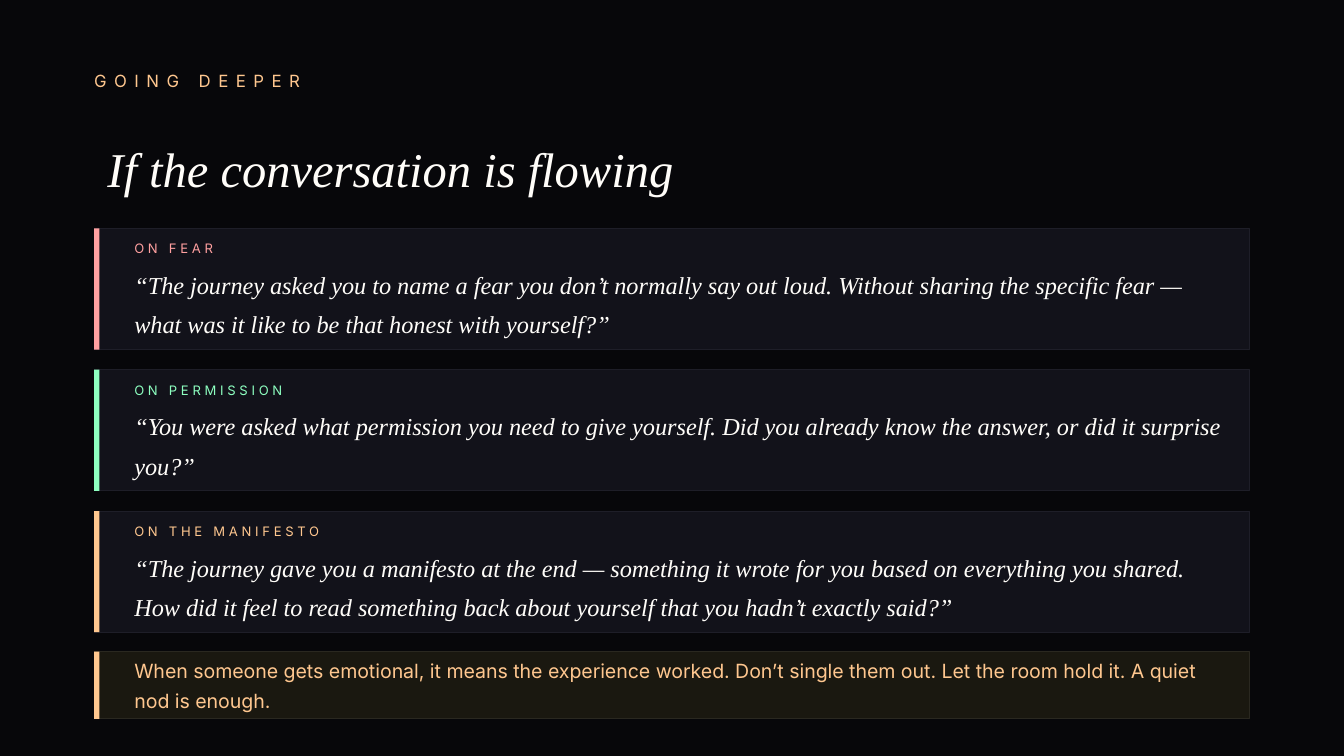
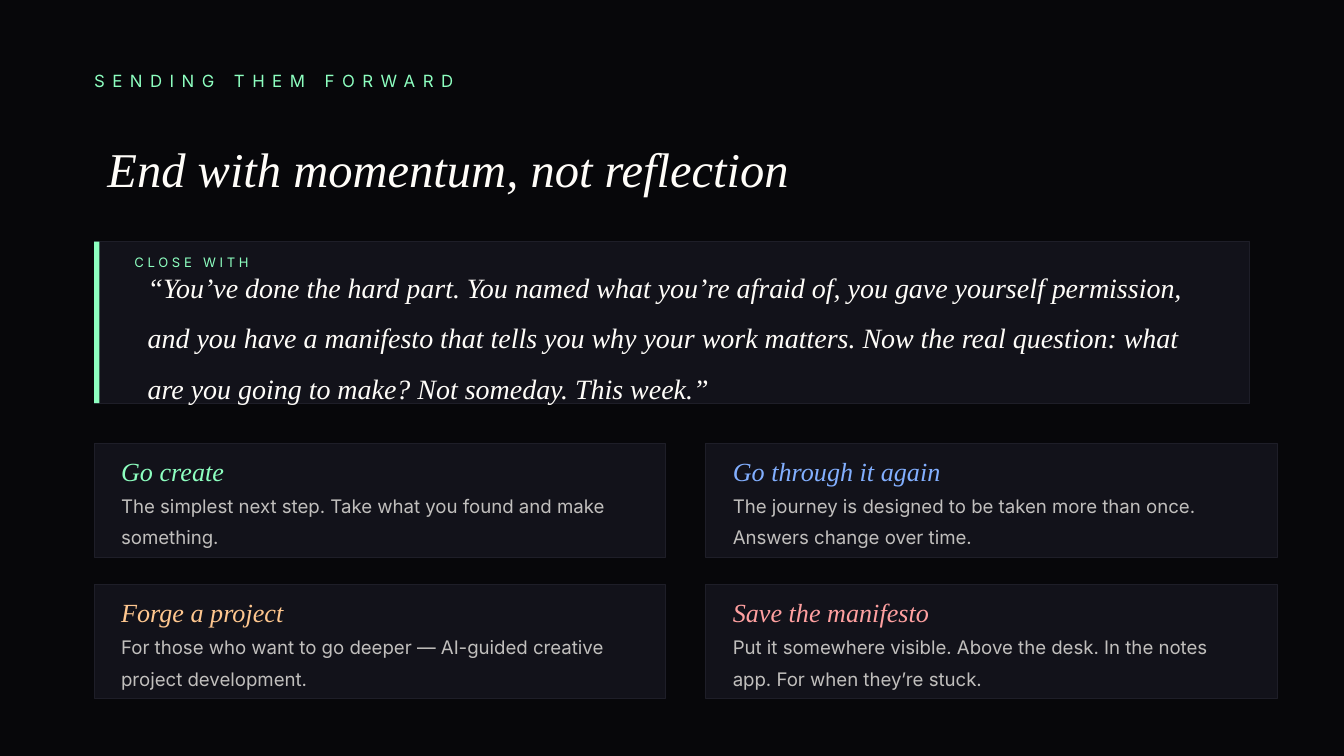
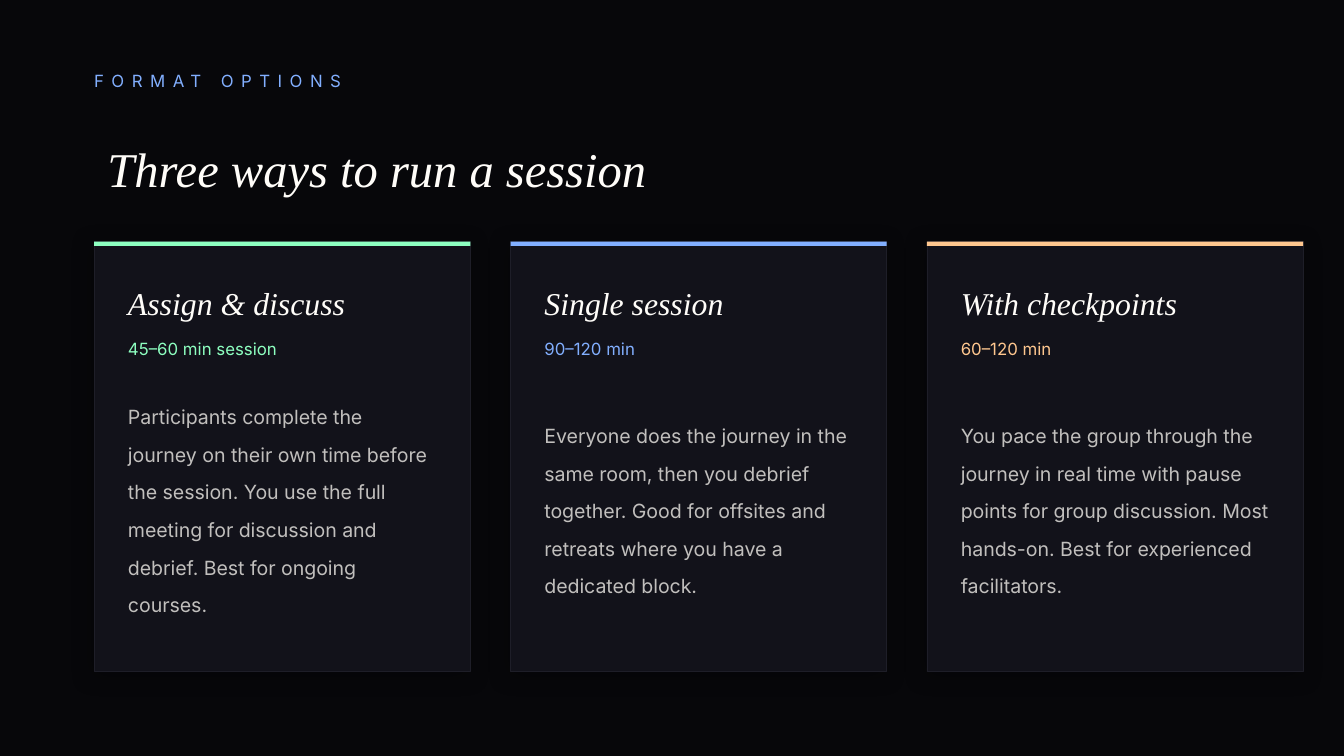
from lxml import etree
from pptx import Presentation
from pptx import util as u
from pptx.dml.color import RGBColor
from pptx.enum import shapes, text
from pptx.oxml.ns import qn

COLORS = {
    "night": "07070A", "panel": "12121A", "panel_edge": "1E1E28",
    "note": "1A1810", "note_edge": "2A2820",
    "ivory": "FFFDF9", "grey": "C1BFBD", "shadow": "000000",
    "amber": "FFC78F", "green": "8DFFC0", "blue": "82AFFF", "coral": "FFA0A0",
}
SERIF, SANS = "Times New Roman", "Inter"

# Shared measures, in centimetres
LEFT = 1.78
PANEL_W = 21.84
INDENT = 2.54
TEXT_W = 20.57
LABEL_W = 20.32
ROW_PITCH = 2.67
LOWER_TOP = 4.57


def rgb(name):
    return RGBColor.from_string(COLORS[name])


def add_block(slide, left, top, width, height, fill, edge=None):
    block = slide.shapes.add_shape(
        shapes.MSO_SHAPE.RECTANGLE, u.Cm(left), u.Cm(top), u.Cm(width), u.Cm(height))
    block.shadow.inherit = False
    block.fill.solid()
    block.fill.fore_color.rgb = rgb(fill)
    if edge:
        block.line.color.rgb = rgb(edge)
        block.line.width = u.Pt(0.5)
    else:
        block.line.fill.background()
    return block


def add_words(slide, left, top, width, height, words, size, color, font=SANS,
              tracking=0, spacing=None, inset=False):
    """One paragraph, centred vertically; serif text is always italic."""
    box = slide.shapes.add_textbox(u.Cm(left), u.Cm(top), u.Cm(width), u.Cm(height))
    frame = box.text_frame
    frame.word_wrap = True
    frame.vertical_anchor = text.MSO_ANCHOR.MIDDLE
    if not inset:
        frame.margin_left = frame.margin_right = 0
        frame.margin_top = frame.margin_bottom = 0
    paragraph = frame.paragraphs[0]
    if spacing:
        paragraph.line_spacing = spacing
    run = paragraph.add_run()
    run.text = words
    run.font.name = font
    run.font.size = u.Pt(size)
    run.font.color.rgb = rgb(color)
    if font == SERIF:
        run.font.italic = True
    if tracking:
        run.font._element.set("spc", str(tracking * 100))


def add_soft_shadow(block):
    effects = block._element.spPr.find(qn("a:effectLst"))
    shadow = etree.SubElement(
        effects, qn("a:outerShdw"), blurRad=str(u.Pt(12)), dist=str(u.Pt(2)),
        dir="8100000", algn="bl", rotWithShape="0")
    tint = etree.SubElement(shadow, qn("a:srgbClr"), val=COLORS["shadow"])
    etree.SubElement(tint, qn("a:alpha"), val="30000")


def start_slide(deck, kicker, title, accent):
    slide = deck.slides.add_slide(deck.slide_layouts[6])
    slide.background.fill.solid()
    slide.background.fill.fore_color.rgb = rgb("night")
    add_words(slide, LEFT, 1.02, LABEL_W, 1.02, kicker, 9, accent, tracking=4)
    add_words(slide, LEFT, 2.29, LABEL_W, 1.78, title, 26, "ivory", SERIF, inset=True)
    return slide


def add_barred_panel(slide, top, height, accent, fill="panel", edge="panel_edge"):
    add_block(slide, LEFT, top, PANEL_W, height, fill, edge)
    add_block(slide, LEFT, top, 0.1, height, accent)


def add_prompt(slide, top, label, quote, accent):
    add_barred_panel(slide, top, 2.29, accent)
    add_words(slide, INDENT, top + 0.15, LABEL_W, 0.46, label, 7, accent, tracking=2)
    add_words(slide, INDENT, top + 0.64, TEXT_W, 1.4, quote, 13, "ivory", SERIF,
              spacing=1.35)


def add_next_step(slide, left, top, name, detail, accent):
    add_block(slide, left, top, 10.8, 2.16, "panel", "panel_edge")
    add_words(slide, left + 0.51, top + 0.2, 9.78, 0.64, name, 14, accent, SERIF)
    add_words(slide, left + 0.51, top + 0.89, 9.78, 1.02, detail, 10, "grey", spacing=1.4)


def add_format_card(slide, left, name, duration, detail, accent):
    card = add_block(slide, left, LOWER_TOP, 7.11, 8.13, "panel", "panel_edge")
    add_soft_shadow(card)
    add_block(slide, left, LOWER_TOP, 7.11, 0.08, accent)
    inner = left + 0.64
    add_words(slide, inner, LOWER_TOP + 0.64, 5.84, 1.02, name, 17, "ivory", SERIF)
    add_words(slide, inner, LOWER_TOP + 1.65, 5.84, 0.76, duration, 9, accent)
    add_words(slide, inner, LOWER_TOP + 2.67, 5.84, 4.57, detail, 10.5, "grey", spacing=1.6)


def build_going_deeper(deck):
    slide = start_slide(deck, "GOING DEEPER", "If the conversation is flowing", "amber")
    prompts = [
        ("ON FEAR", "“The journey asked you to name a fear you don’t normally say out loud. "
         "Without sharing the specific fear — what was it like to be that honest with "
         "yourself?”", "coral"),
        ("ON PERMISSION", "“You were asked what permission you need to give yourself. "
         "Did you already know the answer, or did it surprise you?”", "green"),
        ("ON THE MANIFESTO", "“The journey gave you a manifesto at the end — something it "
         "wrote for you based on everything you shared. How did it feel to read something "
         "back about yourself that you hadn’t exactly said?”", "amber"),
    ]
    for row, prompt in enumerate(prompts):
        add_prompt(slide, 4.32 + row * ROW_PITCH, *prompt)

    # Facilitator note
    add_barred_panel(slide, 12.32, 1.27, "amber", "note", "note_edge")
    add_words(slide, INDENT, 12.45, TEXT_W, 0.89,
              "When someone gets emotional, it means the experience worked. Don’t single "
              "them out. Let the room hold it. A quiet nod is enough.",
              10.5, "amber", spacing=1.3)


def build_sending_forward(deck):
    slide = start_slide(deck, "SENDING THEM FORWARD", "End with momentum, not reflection",
                        "green")
    # Closing words
    add_barred_panel(slide, LOWER_TOP, 3.05, "green")
    add_words(slide, INDENT, 4.7, LABEL_W, 0.51, "CLOSE WITH", 7, "green", tracking=2)
    add_words(slide, INDENT, 5.21, TEXT_W, 2.03,
              "“You’ve done the hard part. You named what you’re afraid of, you gave "
              "yourself permission, and you have a manifesto that tells you why your work "
              "matters. Now the real question: what are you going to make? Not someday. "
              "This week.”", 15, "ivory", SERIF, spacing=1.5, inset=True)

    # Next steps, two by two
    next_steps = [
        ("Go create", "The simplest next step. Take what you found and make something.",
         "green"),
        ("Go through it again", "The journey is designed to be taken more than once. "
         "Answers change over time.", "blue"),
        ("Forge a project", "For those who want to go deeper — AI-guided creative project "
         "development.", "amber"),
        ("Save the manifesto", "Put it somewhere visible. Above the desk. In the notes "
         "app. For when they’re stuck.", "coral"),
    ]
    for index, step in enumerate(next_steps):
        row, column = divmod(index, 2)
        add_next_step(slide, LEFT + column * 11.56, 8.38 + row * ROW_PITCH, *step)


def build_format_options(deck):
    slide = start_slide(deck, "FORMAT OPTIONS", "Three ways to run a session", "blue")
    formats = [
        ("Assign & discuss", "45–60 min session", "Participants complete the journey on "
         "their own time before the session. You use the full meeting for discussion and "
         "debrief. Best for ongoing courses.", "green"),
        ("Single session", "90–120 min", "Everyone does the journey in the same room, "
         "then you debrief together. Good for offsites and retreats where you have a "
         "dedicated block.", "blue"),
        ("With checkpoints", "60–120 min", "You pace the group through the journey in "
         "real time with pause points for group discussion. Most hands-on. Best for "
         "experienced facilitators.", "amber"),
    ]
    for column, session_format in enumerate(formats):
        add_format_card(slide, LEFT + column * 7.87, *session_format)


def main():
    deck = Presentation()
    deck.slide_width, deck.slide_height = u.Cm(25.4), u.Cm(14.29)
    build_going_deeper(deck)
    build_sending_forward(deck)
    build_format_options(deck)
    deck.save("out.pptx")


if __name__ == "__main__":
    main()
